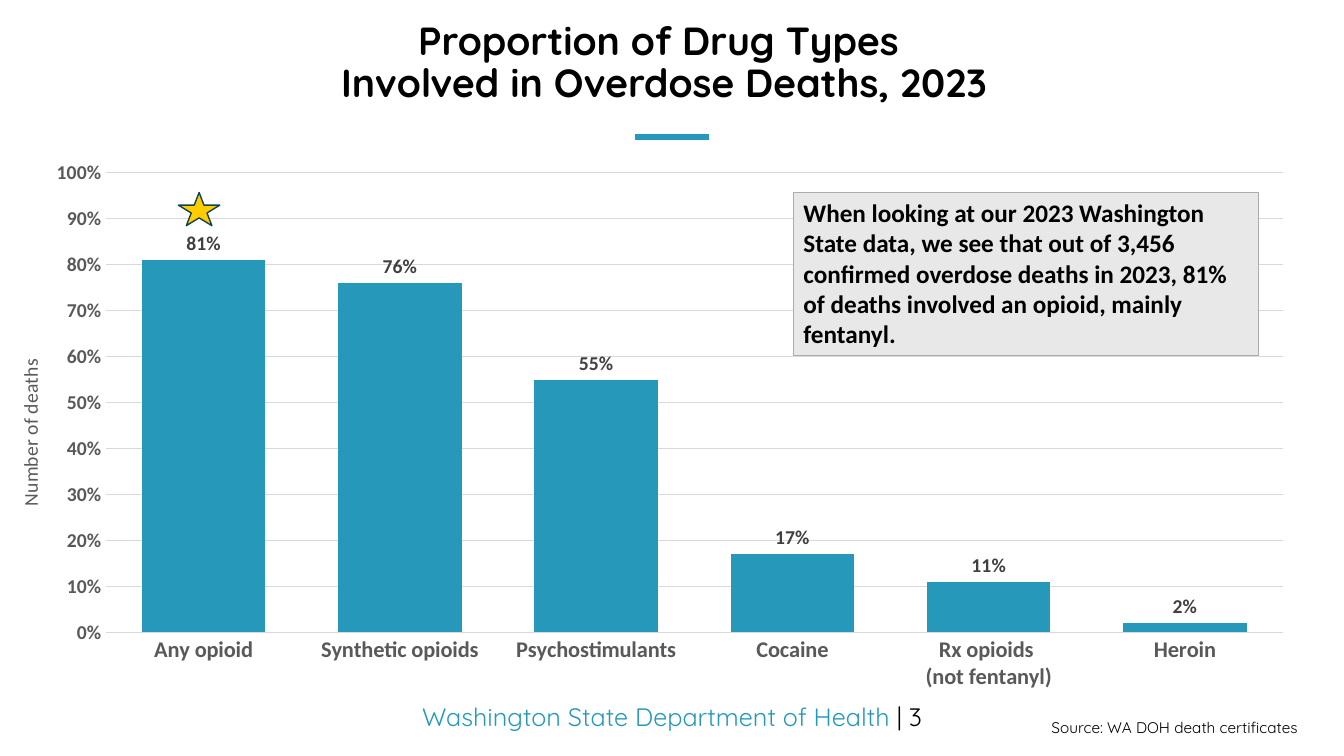
from dataclasses import dataclass

from lxml.etree import SubElement
from pptx import Presentation
from pptx.chart.data import CategoryChartData
from pptx.dml.color import RGBColor
from pptx.enum.chart import XL_CHART_TYPE, XL_LABEL_POSITION, XL_TICK_MARK
from pptx.enum.shapes import MSO_CONNECTOR, MSO_SHAPE
from pptx.enum.text import MSO_ANCHOR, PP_ALIGN
from pptx.oxml import parse_xml
from pptx.oxml.ns import nsdecls, qn
from pptx.util import Inches, Pt


@dataclass(frozen=True)
class Theme:
    head: str = "Quicksand"
    body: str = "Calibri"
    teal: str = "2699BB"
    black: str = "000000"
    axis: str = "595959"
    label: str = "404040"
    grid: str = "D9D9D9"
    panel: str = "E8E8E8"
    edge: str = "ACACAC"
    gold: str = "FFCC00"
    navy: str = "114352"
    title: int = 28
    text: int = 18
    group: int = 16
    scale: int = 14
    note: int = 11


def paint(font, name, size, color, bold=False):
    font.name = name
    font.size = Pt(size)
    font.bold = bold
    font.color.rgb = RGBColor.from_string(color)


def stroke(line, color, width):
    line.color.rgb = RGBColor.from_string(color)
    line.width = Pt(width)


def layout(parent, inner=False, **spots):
    old = parent.find(qn("c:layout"))
    if old is not None:
        parent.remove(old)
    target = '<c:layoutTarget val="inner"/>' if inner else ""
    modes = "".join(f'<c:{key}Mode val="edge"/>' for key in spots if key in "xy")
    sizes = "".join(f'<c:{key} val="{value}"/>' for key, value in spots.items())
    node = parse_xml(
        f'<c:layout {nsdecls("c")}><c:manualLayout>{target}{modes}{sizes}'
        "</c:manualLayout></c:layout>"
    )
    text = parent.find(qn("c:tx"))
    if text is None:
        parent.insert(0, node)
    else:
        text.addnext(node)


class Deck:
    def __init__(self, theme):
        self.theme = theme
        self.file = Presentation()
        self.file.slide_width = Inches(13.33)
        self.file.slide_height = Inches(7.5)
        self.slide = self.file.slides.add_slide(self.file.slide_layouts[6])

    def text(self, box, text, size, align=PP_ALIGN.LEFT, bold=False, wrap=True,
             space=None, anchor=MSO_ANCHOR.TOP):
        frame = self.slide.shapes.add_textbox(*map(Inches, box)).text_frame
        frame.word_wrap = wrap
        frame.vertical_anchor = anchor
        line = frame.paragraphs[0]
        line.text = text
        line.alignment = align
        line.line_spacing = space
        paint(line.font, self.theme.head, size, self.theme.black, bold)
        return line

    def footer(self, box, parts):
        line = self.text(box, "", self.theme.text, PP_ALIGN.CENTER)
        for text, color in parts:
            run = line.add_run()
            run.text = text
            paint(run.font, self.theme.head, self.theme.text, color)

    def shape(self, kind, box, fill, edge):
        shape = self.slide.shapes.add_shape(kind, *map(Inches, box))
        shape.shadow.inherit = False
        shape.fill.solid()
        shape.fill.fore_color.rgb = RGBColor.from_string(fill)
        stroke(shape.line, edge, 1)
        return shape

    def panel(self, box, text):
        theme = self.theme
        frame = self.shape(MSO_SHAPE.RECTANGLE, box, theme.panel, theme.edge).text_frame
        frame.word_wrap = True
        frame.vertical_anchor = MSO_ANCHOR.TOP
        line = frame.paragraphs[0]
        line.text = text
        line.alignment = PP_ALIGN.LEFT
        paint(line.font, theme.body, theme.text, theme.black, True)

    def rule(self, left, right, top):
        line = self.slide.shapes.add_connector(
            MSO_CONNECTOR.STRAIGHT, *map(Inches, (left, top, right, top)))
        stroke(line.line, self.theme.teal, 4)
        SubElement(line._element.spPr, qn("a:effectLst"))

    def chart(self, box, shares, name):
        theme = self.theme
        data = CategoryChartData(number_format="0%")
        data.categories = list(shares)
        data.add_series("Share of deaths", list(shares.values()))
        chart = self.slide.shapes.add_chart(
            XL_CHART_TYPE.COLUMN_CLUSTERED, *map(Inches, box), data).chart
        chart.has_legend = False
        chart.has_title = False
        paint(chart.font, theme.body, 10, theme.black)
        layout(chart._chartSpace.chart.plotArea, True, x=0.08, y=0.04, w=0.89, h=0.82)
        layout(chart._chartSpace.chart.plotArea, True,
               x=round(1.04 / box[2], 3), y=round(0.245 / box[3], 3),
               w=round(11.68 / box[2], 3), h=round(4.56 / box[3], 3))
        self.bars(chart.plots[0])
        self.axes(chart.category_axis, chart.value_axis, name)

    def bars(self, plot):
        theme = self.theme
        plot.gap_width = 59
        plot.overlap = -27
        plot.vary_by_categories = False
        fill = plot.series[0].format.fill
        fill.solid()
        fill.fore_color.rgb = RGBColor.from_string(theme.teal)
        plot.has_data_labels = True
        labels = plot.data_labels
        labels.show_value = True
        labels.number_format = "0%"
        labels.number_format_is_linked = False
        labels.position = XL_LABEL_POSITION.OUTSIDE_END
        paint(labels.font, theme.body, theme.scale, theme.label, True)

    def axes(self, groups, scale, name):
        theme = self.theme
        for axis, size in ((groups, theme.group), (scale, theme.scale)):
            axis.major_tick_mark = XL_TICK_MARK.NONE
            axis.minor_tick_mark = XL_TICK_MARK.NONE
            paint(axis.tick_labels.font, theme.body, size, theme.axis, True)
        stroke(groups.format.line, theme.grid, 0.75)
        scale.format.line.fill.background()
        scale.minimum_scale = 0
        scale.maximum_scale = 1
        scale.major_unit = 0.1
        scale.tick_labels.number_format = "0%"
        scale.tick_labels.number_format_is_linked = False
        scale.has_major_gridlines = True
        stroke(scale.major_gridlines.format.line, theme.grid, 0.75)
        line = scale.axis_title.text_frame.paragraphs[0]
        line.text = name
        paint(line.font, theme.body, theme.scale, theme.axis)
        layout(scale.axis_title._element, x=0.01, y=0.37)


def main():
    theme = Theme()
    deck = Deck(theme)
    deck.rule(6.3, 7.03, 1.36)
    deck.footer((0, 6.91, 13.33, 0.4), (
        ("Washington State Department of Health ", theme.teal),
        ("| 3", theme.black),
    ))
    deck.chart((0, 1.47, 13.08, 5.56), {
        "Any opioid": 0.81,
        "Synthetic opioids": 0.76,
        "Psychostimulants": 0.55,
        "Cocaine": 0.17,
        "Rx opioids \n(not fentanyl)": 0.11,
        "Heroin": 0.02,
    }, "Number of deaths")
    deck.text((-0.08, 0.05, 13.33, 1.16),
              "Proportion of Drug Types \vInvolved in Overdose Deaths, 2023",
              theme.title, PP_ALIGN.CENTER, True, space=0.9, anchor=MSO_ANCHOR.MIDDLE)
    deck.text((10.33, 7.07, 2.87, 0.29), "Source: WA DOH death certificates",
              theme.note, wrap=False)
    deck.panel((7.87, 1.91, 4.61, 1.62),
               "When looking at our 2023 Washington State data, we see that out of "
               "3,456 confirmed overdose deaths in 2023, 81% of deaths involved an "
               "opioid, mainly fentanyl.")
    deck.shape(MSO_SHAPE.STAR_5_POINT, (1.77, 1.91, 0.41, 0.33), theme.gold, theme.navy)
    deck.file.save("out.pptx")


if __name__ == "__main__":
    main()
